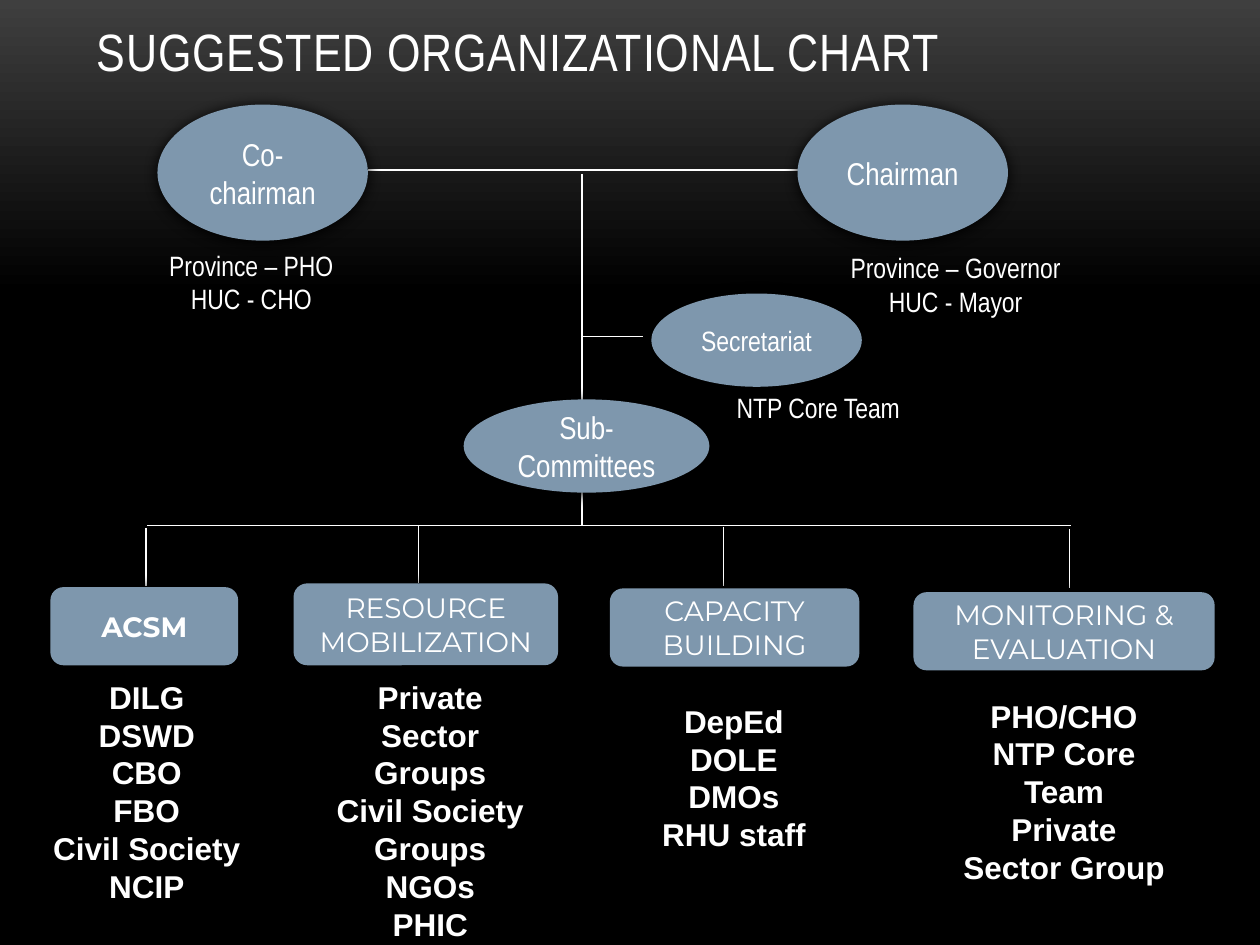
from copy import deepcopy
from dataclasses import dataclass

from lxml.etree import SubElement
from pptx import Presentation
from pptx.dml.color import RGBColor as RGB
from pptx.enum.shapes import MSO_CONNECTOR, MSO_SHAPE as SHAPE
from pptx.enum.text import MSO_ANCHOR as ANCHOR, MSO_AUTO_SIZE as AUTO, PP_ALIGN as ALIGN
from pptx.oxml.ns import qn
from pptx.util import Inches, Pt


@dataclass(frozen=True)
class Theme:
    white: RGB = RGB.from_string("FFFFFF")
    node: RGB = RGB.from_string("7E97AD")
    top: RGB = RGB.from_string("3F3F3F")
    base: RGB = RGB.from_string("000000")
    narrow: str = "Arial Narrow"
    box: str = "Montserrat"
    body: str = "Arial"
    title: int = 30
    large: int = 18
    small: int = 16
    line: float = 0.75


T = Theme()


@dataclass(frozen=True)
class Node:
    text: str
    x: float
    y: float
    w: float
    h: float
    kind: SHAPE = SHAPE.OVAL
    size: int = T.large
    font: str = T.narrow
    bold: bool = False


@dataclass(frozen=True)
class Label:
    lines: tuple[str, ...]
    x: float
    y: float
    w: float
    h: float


@dataclass(frozen=True)
class Line:
    x1: float
    y1: float
    x2: float
    y2: float


@dataclass(frozen=True)
class Committee:
    box: Node
    drop: Line
    members: Label


def committee(text: str, x: float, y: float, w: float, h: float,
              drop: tuple[float, float, float], members: Label, bold: bool = False) -> Committee:
    """drop is the x of the vertical line and its two ends."""
    stem_x, start, end = drop
    box = Node(text, x, y, w, h, SHAPE.ROUNDED_RECTANGLE, T.small, T.box, bold)
    return Committee(box, Line(stem_x, start, stem_x, end), members)


OFFICERS = (
    Node("Chairman", 6.33, 0.83, 1.67, 1.08),
    Node("Co-chairman", 1.25, 0.83, 1.67, 1.08),
    Node("Secretariat", 5.17, 2.33, 1.67, 0.74, size=T.small),
    Node("Sub-Committees", 3.68, 3.17, 1.95, 0.74),
)
OFFICER_LABELS = (
    Label(("Province – Governor", "HUC - Mayor"), 6.42, 1.94, 2.33, 0.64),
    Label(("Province – PHO", "HUC - CHO"), 0.83, 1.92, 2.33, 0.64),
    Label(("NTP Core Team",), 5.33, 3.05, 2.33, 0.37),
)
TRUNK = (
    Line(2.92, 1.35, 6.33, 1.35),
    Line(4.62, 1.38, 4.62, 4.17),
    Line(4.62, 2.67, 5.1, 2.67),
    Line(1.17, 4.17, 8.5, 4.17),
)
COMMITTEES = (
    committee("ACSM", 0.4, 4.66, 1.49, 0.62, (1.16, 4.19, 4.65),
              Label(("DILG", "DSWD", "CBO", "FBO", "Civil Society", "NCIP"),
                    0.25, 5.33, 1.83, 1.92), bold=True),
    committee("RESOURCE MOBILIZATION", 2.33, 4.63, 2.1, 0.65, (3.32, 4.17, 4.63),
              Label(("Private Sector Groups", "Civil Society Groups", "NGOs", "PHIC"),
                    2.5, 5.33, 1.83, 2.22)),
    committee("CAPACITY BUILDING", 4.84, 4.67, 1.98, 0.62, (5.74, 4.18, 4.65),
              Label(("DepEd", "DOLE", "DMOs", "RHU staff"), 4.91, 5.52, 1.83, 1.31)),
    committee("MONITORING & EVALUATION", 7.25, 4.7, 2.39, 0.62, (8.49, 4.2, 4.67),
              Label(("PHO/CHO", "NTP Core Team", "Private Sector Group"),
                    7.53, 5.48, 1.83, 1.62)),
)


def write(tf, lines: tuple[str, ...], size: int, font: str,
          bold: bool = False, align: ALIGN = ALIGN.CENTER) -> None:
    tf.word_wrap = True
    for i, text in enumerate(lines):
        p = tf.paragraphs[0] if i == 0 else tf.add_paragraph()
        p.add_run().text = text
        p.alignment = align
        p.font.size, p.font.name, p.font.bold = Pt(size), font, bold
        p.font.color.rgb = T.white


def add_shadow(sp) -> None:
    effects = SubElement(sp._element.spPr, qn("a:effectLst"))
    shadow = SubElement(effects, qn("a:outerShdw"), blurRad=str(Pt(8.5)), dist=str(Pt(1)),
                        dir="5400000", algn="ctr", rotWithShape="0")
    SubElement(shadow, qn("a:srgbClr"), val=str(T.base))


def add_node(s, n: Node) -> None:
    sp = s.shapes.add_shape(n.kind, Inches(n.x), Inches(n.y), Inches(n.w), Inches(n.h))
    sp.fill.solid()
    sp.fill.fore_color.rgb = T.node
    sp.line.fill.background()
    add_shadow(sp)
    sp.text_frame.vertical_anchor = ANCHOR.MIDDLE
    write(sp.text_frame, (n.text,), n.size, n.font, n.bold)


def add_label(s, b: Label, size: int, font: str, bold: bool = False) -> None:
    sp = s.shapes.add_textbox(Inches(b.x), Inches(b.y), Inches(b.w), Inches(b.h))
    write(sp.text_frame, b.lines, size, font, bold)
    sp.text_frame.auto_size = AUTO.SHAPE_TO_FIT_TEXT


def add_line(s, c: Line) -> None:
    sp = s.shapes.add_connector(MSO_CONNECTOR.STRAIGHT, Inches(c.x1), Inches(c.y1),
                                Inches(c.x2), Inches(c.y2))
    sp.line.color.rgb = T.white
    sp.line.width = Pt(T.line)
    SubElement(sp._element.spPr, qn("a:effectLst"))


def add_background(s) -> None:
    fill = s.background.fill
    fill.gradient()
    fill.gradient_angle = 270
    first, last = fill.gradient_stops
    first.color.rgb, first.position = T.top, 0
    last.color.rgb, last.position = T.base, 0.31
    last._gs.addnext(deepcopy(last._gs))
    fill.gradient_stops[2].position = 1


def add_title(s, text: str) -> None:
    sp = s.shapes.add_textbox(Inches(0.67), Inches(0.17), Inches(8.67), Inches(0.53))
    tf = sp.text_frame
    tf.vertical_anchor = ANCHOR.BOTTOM
    write(tf, (text,), T.title, T.narrow, align=ALIGN.LEFT)
    tf.paragraphs[0].runs[0]._r.get_or_add_rPr().set("spc", "50")


def main() -> None:
    prs = Presentation()
    prs.slide_width, prs.slide_height = Inches(10), Inches(7.5)
    s = prs.slides.add_slide(prs.slide_layouts[6])
    add_background(s)
    add_title(s, "SUGGESTED ORGANIZATIONAL CHART")

    # Lines lie behind the nodes
    for line in (*TRUNK, *(c.drop for c in COMMITTEES)):
        add_line(s, line)

    # Officers
    for node in OFFICERS:
        add_node(s, node)
    for label in OFFICER_LABELS:
        add_label(s, label, T.small, T.narrow)

    # Sub-committees and their members
    for c in COMMITTEES:
        add_node(s, c.box)
        add_label(s, c.members, T.large, T.body, bold=True)

    prs.save("out.pptx")


if __name__ == "__main__":
    main()
